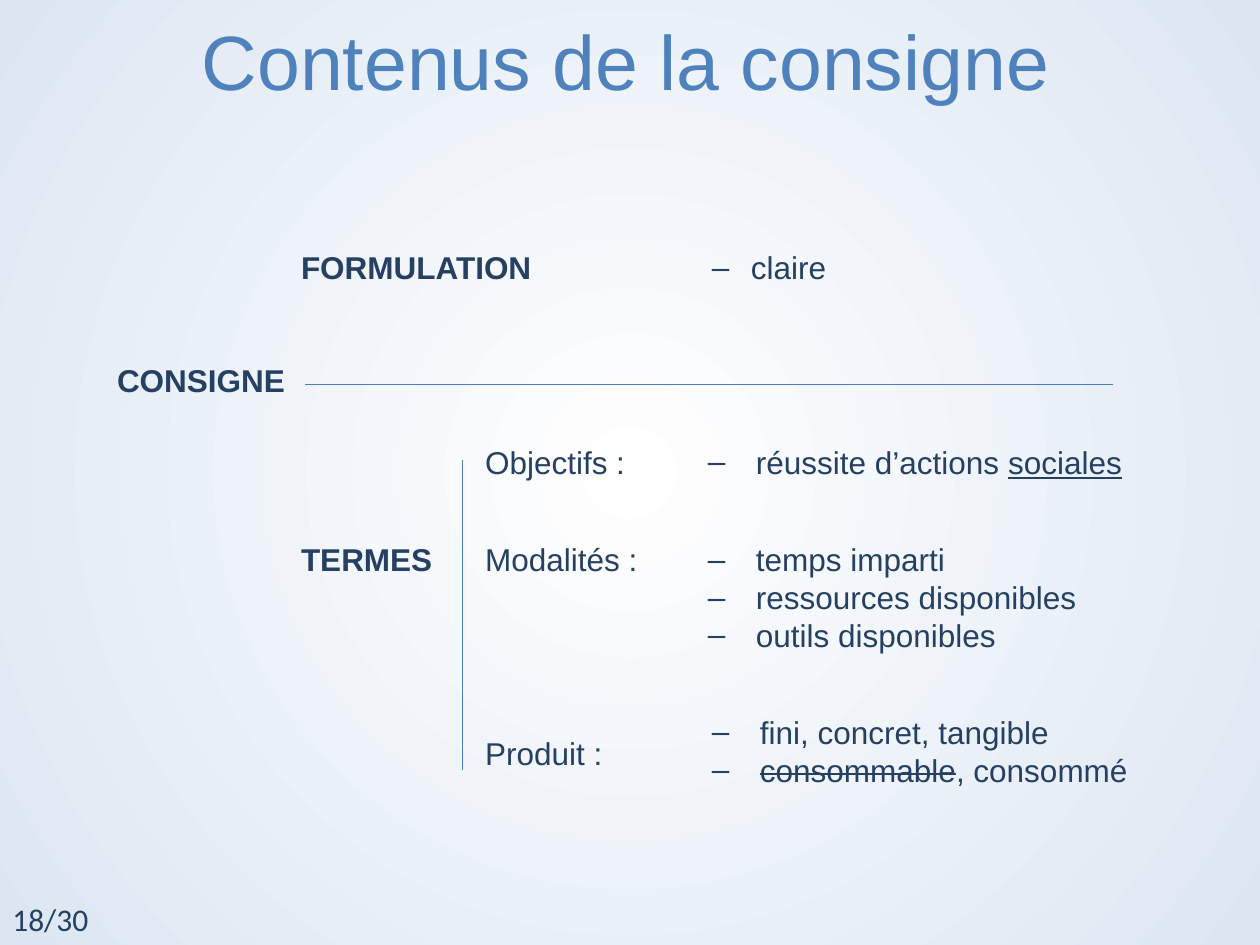
from lxml.etree import SubElement
from pptx import Presentation
from pptx.dml.color import RGBColor
from pptx.enum.shapes import MSO_CONNECTOR as Connector
from pptx.enum.text import MSO_AUTO_SIZE as AutoSize, PP_ALIGN as Align
from pptx.oxml.ns import qn
from pptx.util import Cm, Pt

NAVY = RGBColor(0x25, 0x40, 0x61)
TITLE_BLUE = RGBColor(0x4F, 0x81, 0xBD)
LINE_BLUE = RGBColor(0x4B, 0x7E, 0xBC)
WHITE = RGBColor(0xFF, 0xFF, 0xFF)
PALE_BLUE = RGBColor(0xDC, 0xE6, 0xF2)

BODY = {"name": "Arial", "size": Pt(18)}
HEADING = {**BODY, "bold": True}
FOOTER = {**BODY, "name": "Calibri"}
TITLE = {"name": "Arial", "size": Pt(44)}
LINE_HEIGHT = 1.02


def style_font(font, formats, color):
    for name, value in formats.items():
        setattr(font, name, value)
    font.color.rgb = color


def add_label(page, left, top, width, text, formats):
    box = page.shapes.add_textbox(Cm(left), Cm(top), Cm(width), Cm(LINE_HEIGHT))
    frame = box.text_frame
    frame.word_wrap = False
    frame.auto_size = AutoSize.SHAPE_TO_FIT_TEXT
    span = frame.paragraphs[0].add_run()
    span.text = text
    style_font(span.font, formats, NAVY)


def add_dash_list(page, left, top, width, height, items, indent=0.97):
    """Place a list whose items are sequences of (text, strike, underline)."""
    box = page.shapes.add_textbox(Cm(left), Cm(top), Cm(width), Cm(height))
    frame = box.text_frame
    frame.word_wrap = False
    frame.auto_size = AutoSize.SHAPE_TO_FIT_TEXT
    for number, item in enumerate(items):
        para = frame.add_paragraph() if number else frame.paragraphs[0]
        properties = para._p.get_or_add_pPr()
        properties.set("marL", str(Cm(indent)))
        properties.set("indent", str(-Cm(indent)))
        SubElement(properties, qn("a:buFont"), typeface="Arial")
        SubElement(properties, qn("a:buChar"), char="–")
        for text, strike, underline in item:
            span = para.add_run()
            span.text = text
            style_font(span.font, BODY, NAVY)
            if underline:
                span.font.underline = True
            if strike:
                span.font._element.set("strike", "sngStrike")


def add_rule(page, x1, y1, x2, y2):
    rule = page.shapes.add_connector(
        Connector.STRAIGHT, Cm(x1), Cm(y1), Cm(x2), Cm(y2))
    rule.line.color.rgb = LINE_BLUE
    rule.line.width = Pt(0.75)
    SubElement(rule._element.spPr, qn("a:effectLst"))


def plain(*texts):
    return [[(text, False, False)] for text in texts]


def fill_background(page):
    """Radial gradient, white in the centre."""
    fill = page.background.fill
    fill.gradient()
    for stop, color, position in zip(fill.gradient_stops, (WHITE, PALE_BLUE), (0, 1)):
        stop.color.rgb = color
        stop.position = position
    gradient = page._element.find(".//" + qn("a:gradFill"))
    gradient.remove(gradient.find(qn("a:lin")))
    circle = SubElement(gradient, qn("a:path"), {"path": "circle"})
    centre = dict.fromkeys("ltrb", "50000")
    SubElement(circle, qn("a:fillToRect"), centre)


def add_title(page, left, top, width, height):
    box = page.shapes.add_textbox(Cm(left), Cm(top), Cm(width), Cm(height))
    frame = box.text_frame
    frame.word_wrap = True
    frame.margin_top = Cm(0.28)
    para = frame.paragraphs[0]
    para.alignment = Align.CENTER
    span = para.add_run()
    span.text = "Contenus de la consigne"
    style_font(span.font, TITLE, TITLE_BLUE)


def add_formulation(page, left, top):
    add_label(page, left, top, 5.21, "FORMULATION", HEADING)
    add_dash_list(page, left + 8.28, top, 2.84, LINE_HEIGHT, plain("claire"), 0.79)


def add_consigne(page, left, top):
    add_label(page, left, top, 3.94, "CONSIGNE", HEADING)
    add_rule(page, left + 4.04, top + 0.59, left + 20.32, top + 0.59)


def add_termes(page, left, top):
    terms, lists = left + 3.71, left + 8.2
    modalities = top + 1.96
    add_label(page, left, modalities, 3.18, "TERMES", HEADING)
    add_rule(page, left + 3.5, top + 0.46, left + 3.5, top + 6.71)

    add_label(page, terms, top, 3.35, "Objectifs :", BODY)
    add_dash_list(page, lists, top, 8.94, LINE_HEIGHT, [
        [("réussite d’actions ", False, False), ("sociales", False, True)]])

    add_label(page, terms, modalities, 3.61, "Modalités :", BODY)
    add_dash_list(page, lists, modalities, 8, 2.57, plain(
        "temps imparti", "ressources disponibles", "outils disponibles"))

    add_label(page, terms, top + 5.87, 3.07, "Produit :", BODY)
    add_dash_list(page, lists + 0.08, top + 5.44, 9.12, 2.57, [
        *plain("fini, concret, tangible"),
        [("consommable", True, False), (", consommé", False, False)]])


def main():
    deck = Presentation()
    deck.slide_width, deck.slide_height = Cm(25.4), Cm(19.05)
    page = deck.slides.add_slide(deck.slide_layouts[6])
    fill_background(page)
    add_title(page, 1.19, 0, 22.86, 3.89)
    add_formulation(page, 5.82, 4.88)
    add_consigne(page, 2.11, 7.16)
    add_termes(page, 5.82, 8.81)
    add_label(page, 0, 18.01, 2.06, "18/30", FOOTER)
    deck.save("out.pptx")


if __name__ == "__main__":
    main()
